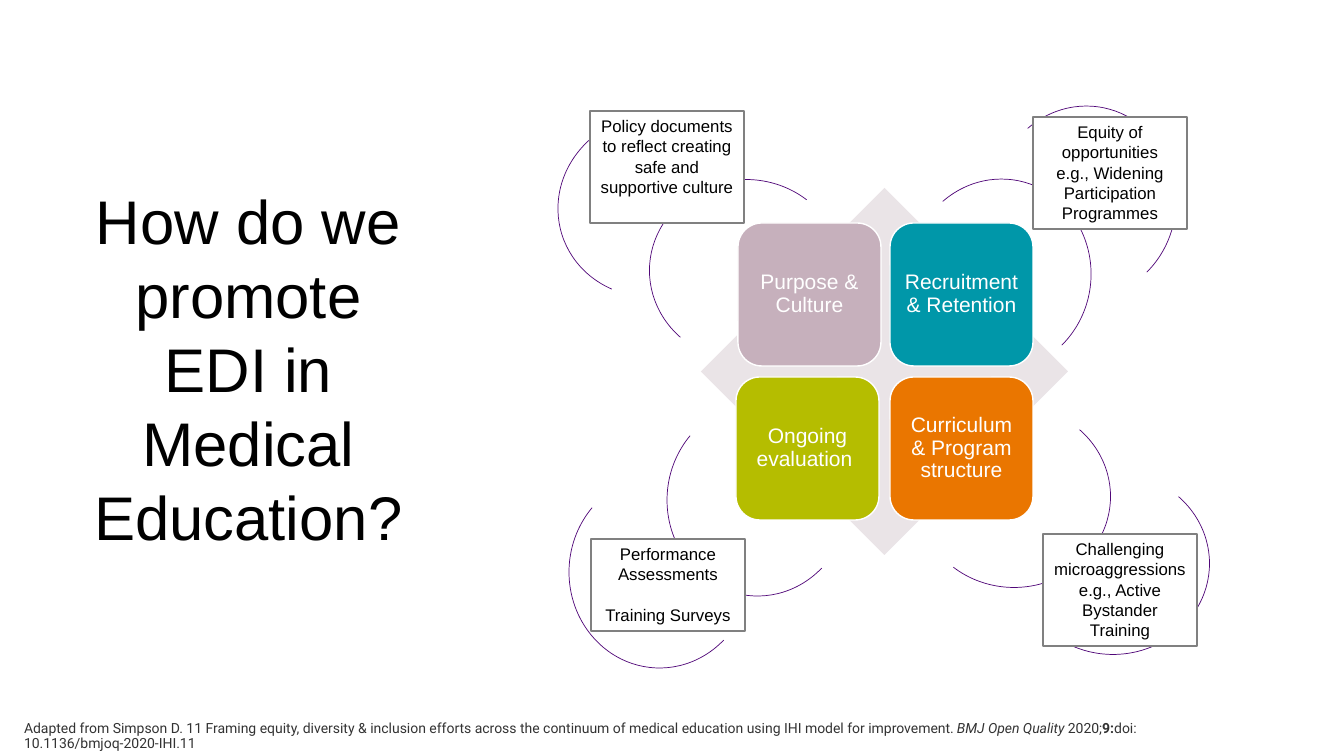
from lxml import etree
from pptx import Presentation
from pptx.dml.color import RGBColor as RGB
from pptx.enum.shapes import MSO_SHAPE as Shape
from pptx.enum.text import MSO_ANCHOR as Anchor, MSO_AUTO_SIZE as Fit, PP_ALIGN as Align
from pptx.oxml.ns import qn
from pptx.util import Pt

SCALE = 914400 / 100.8  # EMU in one px


class Theme:
    sans, serifless = "Arial", "Roboto"
    ink, note, white = "000000", "333333", "FFFFFF"
    hub, edge, arc = "EAE4E7", "808080", "500778"
    title, tile, card, cite = Pt(44), Pt(15), Pt(12), Pt(10)


# Tile: left, top, fill, text, relative to the hub
TILES = [
    (37, 35, "C6B0BC", "Purpose & Culture"),
    (189, 35, "0097A9", "Recruitment & Retention"),
    (35, 189, "B5BD00", "Ongoing evaluation "),
    (189, 189, "EA7600", "Curriculum & Program structure"),
]

# Corner: box, arcs (left, top, turn), card (left, top, height), gap, lines
CORNERS = [
    ((563, 109), [(92, 65, 270), (0, 0, 252.3)], (27, 2, 112), 0,
     ["Policy documents to reflect creating safe and supportive culture"]),
    ((909, 106), [(0, 73, 7.8), (85, 0, 7.8)], (124, 11, 112), 0,
     ["Equity of opportunities", "e.g., Widening Participation Programmes"]),
    ((569, 403), [(0, 72, 182.6), (98, 0, 182.6)], (22, 136, 92), 14.5,
     ["Performance Assessments", "Training Surveys"]),
    ((923, 400), [(0, 0, 90), (99, 67, 90)], (120, 134, 112), 0,
     ["Challenging microaggressions", "e.g., Active Bystander Training"]),
]

CITE = [
    ("Adapted from Simpson D. 11 Framing equity, diversity & inclusion efforts across "
     "the continuum of medical education using IHI model for improvement. ", {}),
    ("BMJ Open Quality ", {"italic": True}),
    ("2020;", {}),
    ("9:", {"bold": True}),
    ("doi: 10.1136/bmjoq-2020-IHI.11", {}),
]


def px(n):
    return round(n * SCALE)


def apply(obj, vals):
    for key, val in vals.items():
        setattr(obj, key, val)


def place(item, box):
    apply(item, dict(zip(("left", "top", "width", "height"), map(px, box))))


def style(font, size, color, name=Theme.sans):
    apply(font, {"size": size, "name": name})
    font.color.rgb = RGB.from_string(color)


def frame(item, anchor, margin=None):
    text = item.text_frame
    apply(text, {"word_wrap": True, "auto_size": Fit.NONE, "vertical_anchor": anchor})
    if margin is not None:
        sides = ("left", "top", "right", "bottom")
        apply(text, {f"margin_{side}": px(margin) for side in sides})
    return text


def draw(slide, kind, box, fill=None, line=None, weight=1):
    item = slide.shapes.add_shape(kind, *map(px, box))
    item.shadow.inherit = False
    if fill:
        item.fill.solid()
        item.fill.fore_color.rgb = RGB.from_string(fill)
    else:
        item.fill.background()
    if line:
        item.line.color.rgb = RGB.from_string(line)
        item.line.width = Pt(weight)
    else:
        item.line.fill.background()
    return item


def write(text, lines, size, color, **vals):
    for i, words in enumerate(lines):
        para = text.paragraphs[0] if i == 0 else text.add_paragraph()
        para.text = words
        para.alignment = Align.CENTER
        apply(para, vals if i else {**vals, "space_before": Pt(0)})
        style(para.font, size, color)


# Question on the left
def title(slide, box):
    item = slide.shapes.title
    place(item, box)
    write(frame(item, Anchor.TOP), ["How do we promote EDI in Medical Education?"],
          Theme.title, Theme.ink)


# Reference along the foot
def cite(slide, box):
    item = slide.placeholders[1]
    place(item, box)
    para = frame(item, Anchor.TOP, 0).paragraphs[0]
    props = para._p.get_or_add_pPr()
    apply(para, {"space_before": Pt(0), "line_spacing": 0.9, "alignment": Align.LEFT})
    props.set("marL", "0")
    props.set("indent", "0")
    etree.SubElement(props, qn("a:buNone"))
    for words, vals in CITE:
        run = para.add_run()
        run.text = words
        style(run.font, Theme.cite, Theme.note, Theme.serifless)
        apply(run.font, vals)


# Diamond with four tiles
def hub(slide, box):
    left, top = box[:2]
    draw(slide, Shape.DIAMOND, box, Theme.hub)
    for x, y, fill, words in TILES:
        tile = draw(slide, Shape.ROUNDED_RECTANGLE, (left + x, top + y, 143, 143),
                    fill, Theme.white)
        write(frame(tile, Anchor.MIDDLE, 6), [words], Theme.tile, Theme.white,
              line_spacing=0.9)


# Two arcs and a card in one corner
def corner(slide, spot, arcs, card, gap, lines):
    left, top = spot
    for x, y, turn in arcs:
        arc = draw(slide, Shape.ARC, (left + x, top + y, 182, 193),
                   line=Theme.arc, weight=0.5)
        arc.adjustments[0], arc.adjustments[1] = 134.68, 24.38
        arc.rotation = turn
    x, y, high = card
    note = draw(slide, Shape.RECTANGLE, (left + x, top + y, 154, high),
                Theme.white, Theme.edge)
    write(frame(note, Anchor.TOP), lines, Theme.card, Theme.ink, space_before=Pt(gap))


def main():
    deck = Presentation()
    apply(deck, {"slide_width": px(1344), "slide_height": px(756)})
    slide = deck.slides.add_slide(deck.slide_layouts[1])
    cite(slide, (24, 721, 1240, 25))
    title(slide, (69, 178, 359, 383))
    hub(slide, (701, 188, 367, 367))
    for part in CORNERS:
        corner(slide, *part)
    deck.save("out.pptx")


if __name__ == "__main__":
    main()
